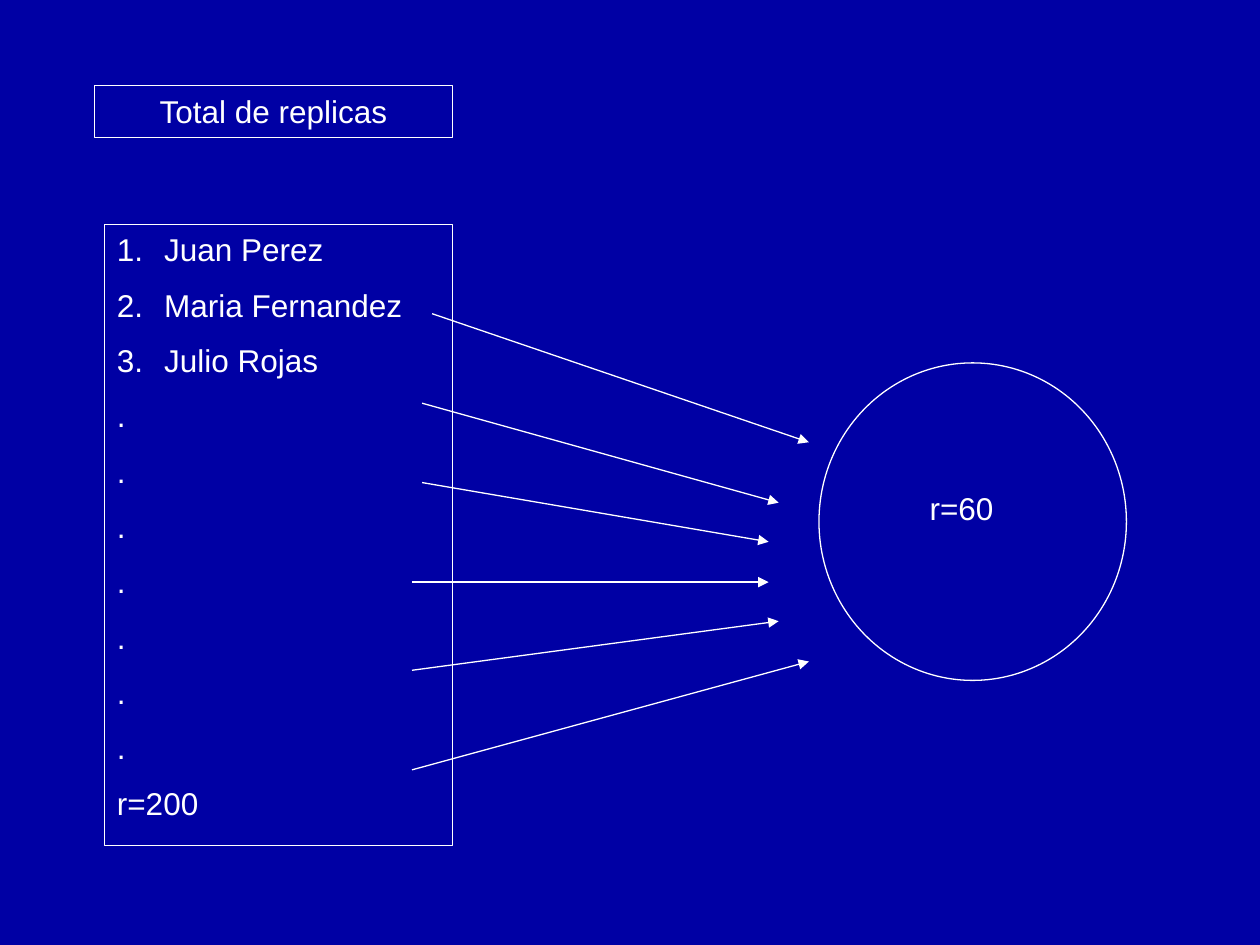
from lxml import etree
from pptx import Presentation, util as u
from pptx.dml.color import RGBColor
from pptx.enum import shapes, text
from pptx.oxml import ns

NAVY = RGBColor(0x00, 0x00, 0xA4)
WHITE = RGBColor(0xFF, 0xFF, 0xFF)

deck = Presentation()
deck.slide_width, deck.slide_height = u.Inches(10), u.Inches(7.5)
COLUMN = deck.slide_width / 100
ROW = deck.slide_height / 75
INDENT = int(3.75 * COLUMN)

page = deck.slides.add_slide(deck.slide_layouts[6])
page.background.fill.solid()
page.background.fill.fore_color.rgb = NAVY


def add_outline(preset, left, top, width, height):
    """Add an unfilled white outline, placed in grid columns and rows."""
    shape = page.shapes.add_shape(
        preset, int(left * COLUMN), int(top * ROW), int(width * COLUMN), int(height * ROW))
    shape.shadow.inherit = False
    shape.fill.background()
    shape.line.color.rgb = WHITE
    shape.line.width = u.Pt(0.75)
    shape.text_frame.word_wrap = True
    shape.text_frame.vertical_anchor = text.MSO_ANCHOR.TOP
    return shape


def add_span(para, words, align=text.PP_ALIGN.LEFT):
    para.alignment = align
    span = para.add_run()
    span.text = words
    span.font.name = "Arial"
    span.font.size = u.Pt(18)
    span.font.color.rgb = WHITE


# Full list of replicas
names = ["Juan Perez", "Maria Fernandez", "Julio Rojas"]
population = add_outline(shapes.MSO_SHAPE.RECTANGLE, 8.3, 17.8, 27.6, 49.3)
frame = population.text_frame
for index, entry in enumerate(names + ["."] * 7 + ["r=200"]):
    para = frame.add_paragraph() if index else frame.paragraphs[0]
    if index < len(names):
        properties = para._p.get_or_add_pPr()
        properties.set("marL", str(INDENT))
        properties.set("indent", str(-INDENT))
        etree.SubElement(properties, ns.qn("a:buFont"), typeface="+mj-lt")
        etree.SubElement(properties, ns.qn("a:buAutoNum"), type="arabicPeriod")
    if index:
        para.space_before = u.Pt(10)
    add_span(para, entry)

# Heading
heading = add_outline(shapes.MSO_SHAPE.RECTANGLE, 7.5, 6.8, 28.4, 4.1)
add_span(heading.text_frame.paragraphs[0], "Total de replicas", text.PP_ALIGN.CENTER)

# Selected sample
add_outline(shapes.MSO_SHAPE.OVAL, 65, 28.8, 24.4, 25.2)
label = page.shapes.add_textbox(
    int(72.8 * COLUMN), int(38.3 * ROW), int(8.6 * COLUMN), int(4 * ROW))
label.text_frame.word_wrap = True
add_span(label.text_frame.paragraphs[0], "r=60")

# Arrows from list to sample: start column, start row, end column, end row
arrows = [
    (34.3, 24.9, 64.2, 35.1),
    (33.5, 32.0, 61.8, 39.9),
    (33.5, 38.3, 61.0, 43.0),
    (32.7, 46.2, 61.0, 46.2),
    (32.7, 53.2, 61.8, 49.3),
    (32.7, 61.1, 64.2, 52.5),
]
for start_x, start_y, end_x, end_y in arrows:
    arrow = page.shapes.add_connector(
        shapes.MSO_CONNECTOR.STRAIGHT, int(start_x * COLUMN), int(start_y * ROW),
        int(end_x * COLUMN), int(end_y * ROW))
    arrow.line.color.rgb = WHITE
    arrow.line.width = u.Pt(0.75)
    etree.SubElement(arrow.line._get_or_add_ln(), ns.qn("a:tailEnd"), type="triangle")
    etree.SubElement(arrow._element.spPr, ns.qn("a:effectLst"))

deck.save("out.pptx")
